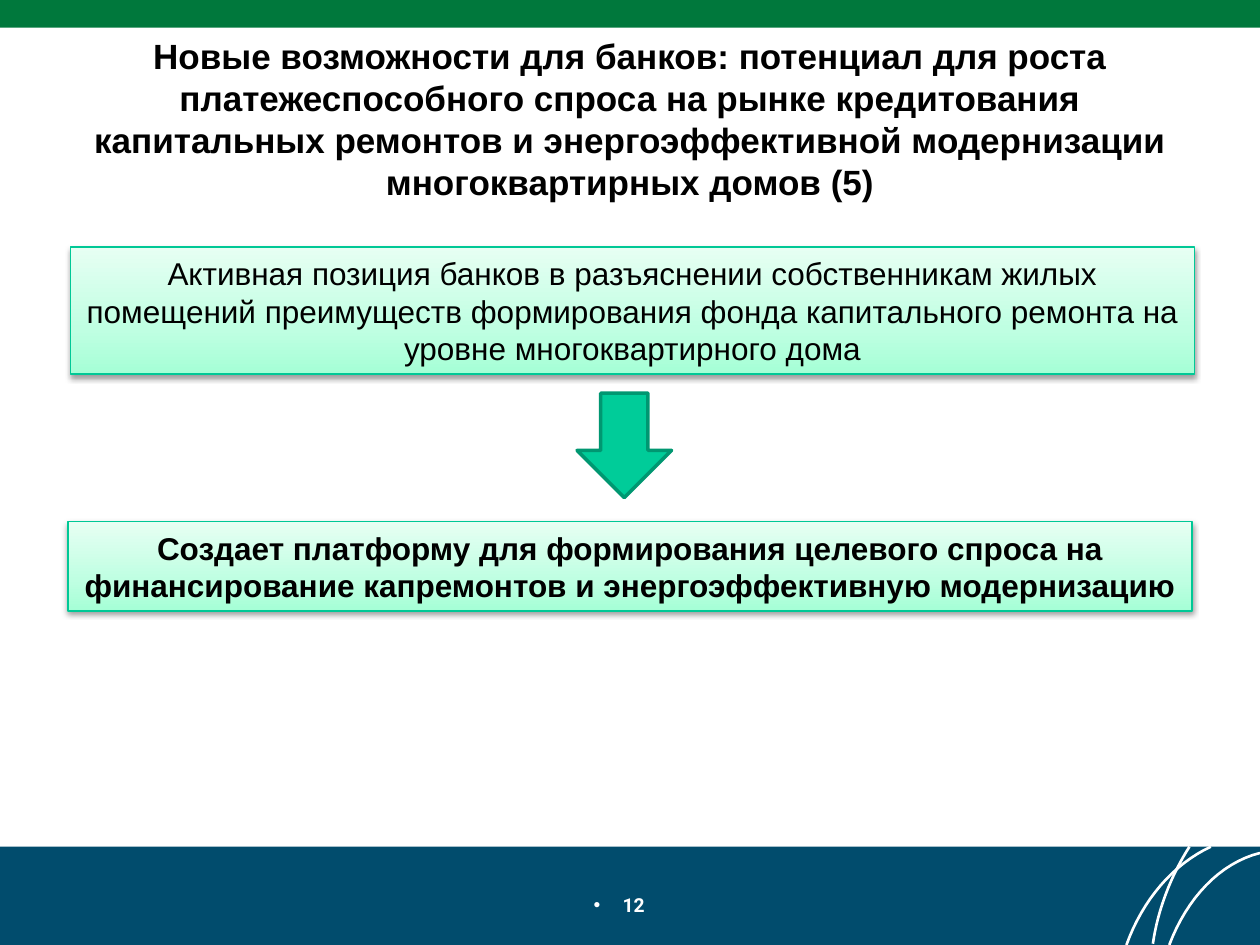
"""Build the slide on new lending opportunities for banks."""
import pptx
import pptx.dml.color
import pptx.enum.shapes
import pptx.enum.text
import pptx.oxml
import pptx.oxml.ns
import pptx.util

Inches = pptx.util.Inches
SHAPE = pptx.enum.shapes.MSO_SHAPE
ANCHOR = pptx.enum.text.MSO_ANCHOR
AUTO_SIZE = pptx.enum.text.MSO_AUTO_SIZE
NAMESPACE = pptx.oxml.ns.nsdecls("a")

THEME = {
    "footer": "014C6D", "header": "00783C", "arc": "FFFFFF",
    "arrow": "00CC99", "arrow_line": "009771", "box_line": "00C896",
    "gradient": [(0, "A5FFD6"), (35, "BFFFE2"), (100, "E7FFF3")],
    "title": {"name": "Arial", "size": 20, "bold": True, "color": "000000"},
    "body": {"name": "Arial", "size": 18, "bold": False, "color": "000000"},
    "strong": {"name": "Arial", "size": 18, "bold": True, "color": "000000"},
    "number": {"name": "Roboto", "size": 11, "bold": True, "color": "FFFFFF"},
}

TITLE = ("Новые возможности для банков: потенциал для роста платежеспособного спроса "
         "на рынке кредитования капитальных ремонтов и энергоэффективной модернизации "
         "многоквартирных домов (5)")
BANDS = [((0, 6.72, 10, 0.78), "footer"), ((0, 0, 10, 0.22), "header")]
ARCS = [
    [(9.61, 6.72), (9.31, 6.86), (9.07, 7.14), (8.94, 7.5)],
    [(10, 6.77), (9.68, 6.85), (9.42, 7.13), (9.28, 7.5)],
    [(9.44, 6.72), (9.3, 6.94), (9.19, 7.21), (9.15, 7.49)],
]
BOXES = [
    ((0.56, 1.96, 8.92, 1.01), "body",
     "Активная позиция банков в разъяснении собственникам жилых помещений преимуществ "
     "формирования фонда капитального ремонта на уровне многоквартирного дома"),
    ((0.54, 4.14, 8.92, 0.71), "strong",
     "Создает платформу для формирования целевого спроса на финансирование капремонтов "
     "и энергоэффективную модернизацию"),
]
ARROW = (4.58, 3.12, 0.75, 0.83)
NUMBER = ("12", (3.97, 7.04, 2.06, 0.31))
ARC_STEPS = 16


def color(value):
    return pptx.dml.color.RGBColor.from_string(value)


def write(shape, text, style, **frame_format):
    frame = shape.text_frame
    for name, value in {"word_wrap": True, **frame_format}.items():
        setattr(frame, name, value)
    paragraph = frame.paragraphs[0]
    paragraph.text = text
    paragraph.alignment = pptx.enum.text.PP_ALIGN.CENTER
    font = paragraph.runs[0].font
    values = {**THEME[style], "size": pptx.util.Pt(THEME[style]["size"])}
    font.color.rgb = color(values.pop("color"))
    for name, value in values.items():
        setattr(font, name, value)
    return paragraph


def outline(shape, line_color, width):
    shape.line.color.rgb = color(line_color)
    shape.line.width = pptx.util.Pt(width)


def add_shape(slide, kind, place, fill=None):
    shape = slide.shapes.add_shape(kind, *map(Inches, place))
    shape.shadow.inherit = False
    if fill:
        shape.fill.solid()
        shape.fill.fore_color.rgb = color(fill)
    return shape


def add_arc(slide, controls):
    points = []
    for step in range(ARC_STEPS + 1):
        t = step / ARC_STEPS
        weights = ((1 - t) ** 3, 3 * t * (1 - t) ** 2, 3 * t * t * (1 - t), t ** 3)
        points.append(tuple(Inches(sum(w * v for w, v in zip(weights, axis)))
                            for axis in zip(*controls)))
    builder = slide.shapes.build_freeform(*points[0])
    builder.add_line_segments(points[1:], close=False)
    arc = builder.convert_to_shape()
    arc.shadow.inherit = False
    arc.fill.background()
    outline(arc, THEME["arc"], 1.5)


def add_box(slide, place, style, text):
    box = add_shape(slide, SHAPE.RECTANGLE, place)
    outline(box, THEME["box_line"], 0.75)
    stops = "".join(f'<a:gs pos="{position * 1000}"><a:srgbClr val="{value}"/></a:gs>'
                    for position, value in THEME["gradient"])
    properties = box.element.spPr
    properties.find(pptx.oxml.ns.qn("a:prstGeom")).addnext(pptx.oxml.parse_xml(
        f'<a:gradFill {NAMESPACE} rotWithShape="1"><a:gsLst>{stops}</a:gsLst>'
        '<a:lin ang="16200000" scaled="1"/></a:gradFill>'))
    properties.find(pptx.oxml.ns.qn("a:effectLst")).append(pptx.oxml.parse_xml(
        f'<a:outerShdw {NAMESPACE} blurRad="40000" dist="20000" dir="5400000" '
        'rotWithShape="0"><a:srgbClr val="000000"><a:alpha val="38000"/></a:srgbClr>'
        '</a:outerShdw>'))
    write(box, text, style, auto_size=AUTO_SIZE.SHAPE_TO_FIT_TEXT)


def add_number(slide, text, place):
    box = slide.shapes.add_textbox(*map(Inches, place))
    paragraph = write(box, text, "number", margin_right=Inches(0.27))
    properties = paragraph._p.get_or_add_pPr()
    properties.set("marL", str(Inches(0.23)))
    properties.set("indent", str(-Inches(0.23)))
    for bullet in ('buFont {} typeface="Arial"', 'buChar {} char="•"'):
        properties.append(pptx.oxml.parse_xml(f"<a:{bullet.format(NAMESPACE)}/>"))


def main():
    presentation = pptx.Presentation()
    presentation.slide_width, presentation.slide_height = Inches(10), Inches(7.5)
    slide = presentation.slides.add_slide(presentation.slide_layouts[5])
    title = slide.shapes.title
    for name, value in zip(("left", "top", "width", "height"), (0.5, 0.44, 9, 1)):
        setattr(title, name, Inches(value))
    write(title, TITLE, "title", vertical_anchor=ANCHOR.MIDDLE, auto_size=AUTO_SIZE.NONE)
    for place, name in BANDS:
        add_shape(slide, SHAPE.RECTANGLE, place, THEME[name]).line.fill.background()
    for controls in ARCS:
        add_arc(slide, controls)
    for place, style, text in BOXES:
        add_box(slide, place, style, text)
    arrow = add_shape(slide, SHAPE.DOWN_ARROW, ARROW, THEME["arrow"])
    outline(arrow, THEME["arrow_line"], 2)
    add_number(slide, *NUMBER)
    presentation.save("out.pptx")


if __name__ == "__main__":
    main()
